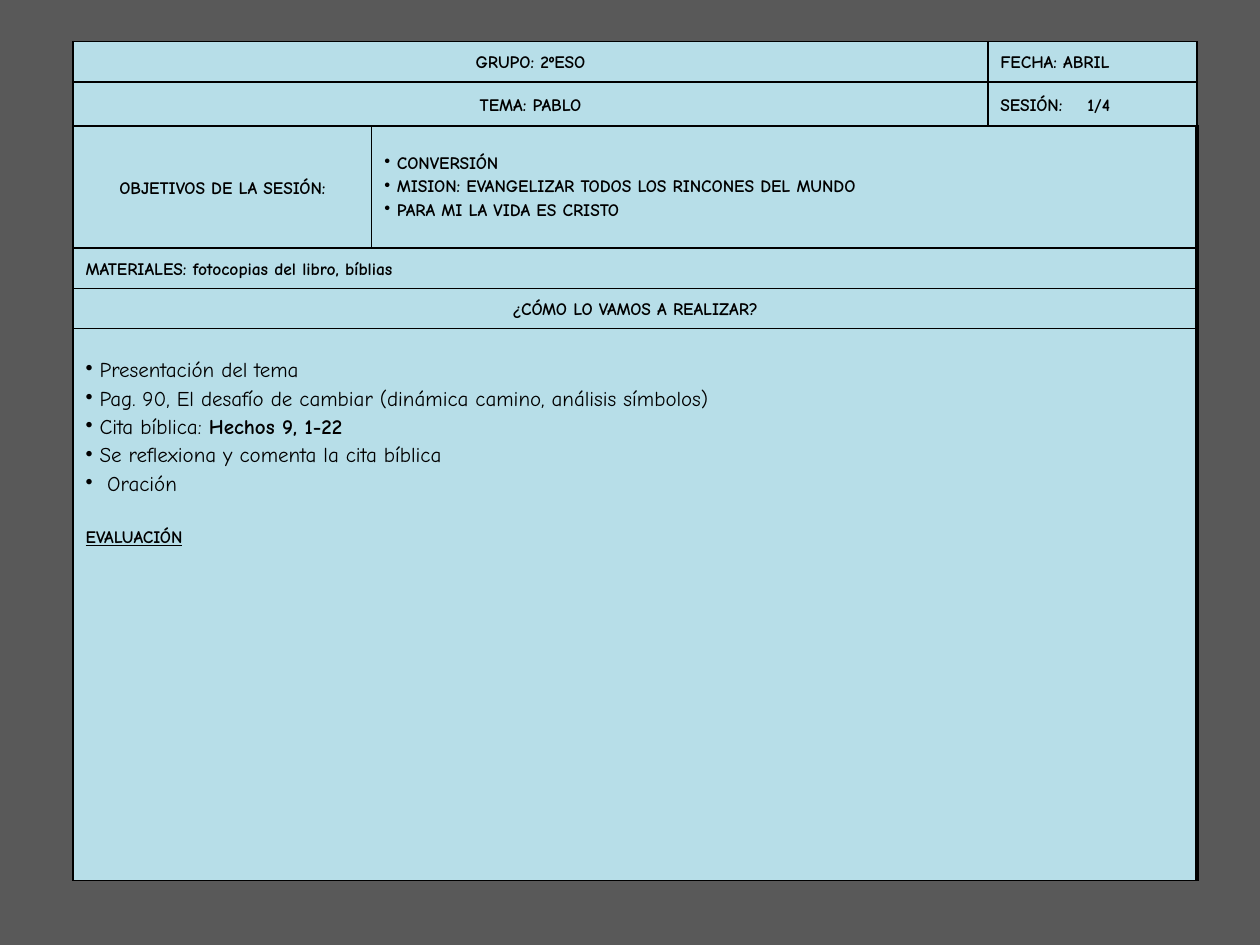
from lxml import etree
from pptx import Presentation
from pptx.dml.color import RGBColor
from pptx.enum.text import MSO_ANCHOR, PP_ALIGN
from pptx.oxml.ns import qn
from pptx.util import Inches, Pt

CENTER, LEFT = PP_ALIGN.CENTER, PP_ALIGN.LEFT
MIDDLE, TOP = MSO_ANCHOR.MIDDLE, MSO_ANCHOR.TOP
GREY, BLUE, BLACK = "595959", "B7DEE8", "000000"
COLS = [2.37, 4.89, 1.66]
ROWS = [0.32, 0.35, 0.97, 0.32, 0.32, 4.38]
HEAD = {"size": Pt(10), "bold": True}
BODY = {"size": Pt(12), "bold": False}
PLAIN = {"line_spacing": 1.15}
MID = {"line_spacing": 1.15, "alignment": CENTER}
LIST = {"space_before": Pt(2), "alignment": LEFT}
STEP = {"space_before": Pt(2.4), "alignment": LEFT}


def paint(fill, color):
    fill.solid()
    fill.fore_color.rgb = RGBColor.from_string(color)


def add_para(cell, runs, style, indent=None, tab=None):
    """Fill the cell's first empty paragraph, or add one; an indent brings a bullet."""
    frame = cell.text_frame
    para = frame.paragraphs[-1]
    if para.runs:
        para = frame.add_paragraph()
    for key, value in style.items():
        setattr(para, key, value)
    for text, look in runs:
        run = para.add_run()
        run.text = text
        for key, value in {"name": "Comic Neue", **look}.items():
            setattr(run.font, key, value)
        paint(run.font.fill, BLACK)
    props = para._p.get_or_add_pPr()
    if indent:
        props.set("marL", str(Inches(indent)))
        props.set("indent", str(-Inches(indent)))
        etree.SubElement(props, qn("a:buChar"), char="•")
    if tab:
        stops = etree.SubElement(props, qn("a:tabLst"))
        etree.SubElement(stops, qn("a:tab"), pos=str(Inches(tab)), algn="l")


prs = Presentation()
prs.slide_width, prs.slide_height = Inches(10), Inches(7.5)
slide = prs.slides.add_slide(prs.slide_layouts[6])
paint(slide.background.fill, GREY)

table = slide.shapes.add_table(
    len(ROWS), len(COLS), Inches(0.58), Inches(0.33),
    Inches(sum(COLS)), Inches(sum(ROWS))).table
table.first_row = table.horz_banding = False
for col, width in zip(table.columns, COLS):
    col.width = Inches(width)
for row, height in zip(table.rows, ROWS):
    row.height = Inches(height)

# Borders and fill: the right edge is thicker from the third row down
for r in range(len(ROWS)):
    for c in range(len(COLS)):
        cell = table.cell(r, c)
        props = cell._tc.get_or_add_tcPr()
        thick = r > 1 and (c == 2 or r > 2 or c == 1)
        for side in "LRTB":
            width = Pt(2.25 if side == "R" and thick else 1)
            line = etree.SubElement(props, qn(f"a:ln{side}"), w=str(width))
            solid = etree.SubElement(line, qn("a:solidFill"))
            etree.SubElement(solid, qn("a:srgbClr"), val=BLACK)
        paint(cell.fill, BLUE)
        cell.vertical_anchor = TOP if r == 5 else MIDDLE

for r, first, last in [(0, 0, 1), (1, 0, 1), (2, 1, 2), (3, 0, 2), (4, 0, 2), (5, 0, 2)]:
    table.cell(r, first).merge(table.cell(r, last))

# Headings
for r, c, text, style, tab in [
    (0, 0, "GRUPO: 2ºESO", MID, None),
    (0, 2, "FECHA: ABRIL", PLAIN, None),
    (1, 0, "TEMA: PABLO", MID, None),
    (1, 2, "SESIÓN:\t1/4", PLAIN, 0.69),
    (2, 0, "OBJETIVOS DE LA SESIÓN:", MID, None),
    (3, 0, "MATERIALES: fotocopias del libro, bíblias", PLAIN, None),
    (4, 0, "¿CÓMO LO VAMOS A REALIZAR?", MID, None),
]:
    add_para(table.cell(r, c), [(text, HEAD)], style, tab=tab)

# Goals
for goal in ["CONVERSIÓN", "MISION: EVANGELIZAR TODOS LOS RINCONES DEL MUNDO",
             "PARA MI LA VIDA ES CRISTO"]:
    add_para(table.cell(2, 1), [(goal, HEAD)], LIST, 0.1)

# Session plan
plan = table.cell(5, 0)
plan.margin_top = Inches(0.24)
for runs, indent in [
    ([("Presentación del tema", BODY)], 0.11),
    ([("Pag. 90, El desafío de cambiar (dinámica camino, análisis símbolos)", BODY)], 0.11),
    ([("Cita bíblica: ", BODY), ("Hechos 9, 1-22", {**BODY, "bold": True})], 0.11),
    ([("Se reflexiona y comenta la cita bíblica", BODY)], 0.11),
    ([("Oración", BODY)], 0.17),
]:
    add_para(plan, runs, STEP, indent)
add_para(plan, [("EVALUACIÓN", {**HEAD, "underline": True})],
         {**PLAIN, "space_before": Pt(16.2)})

prs.save("out.pptx")
